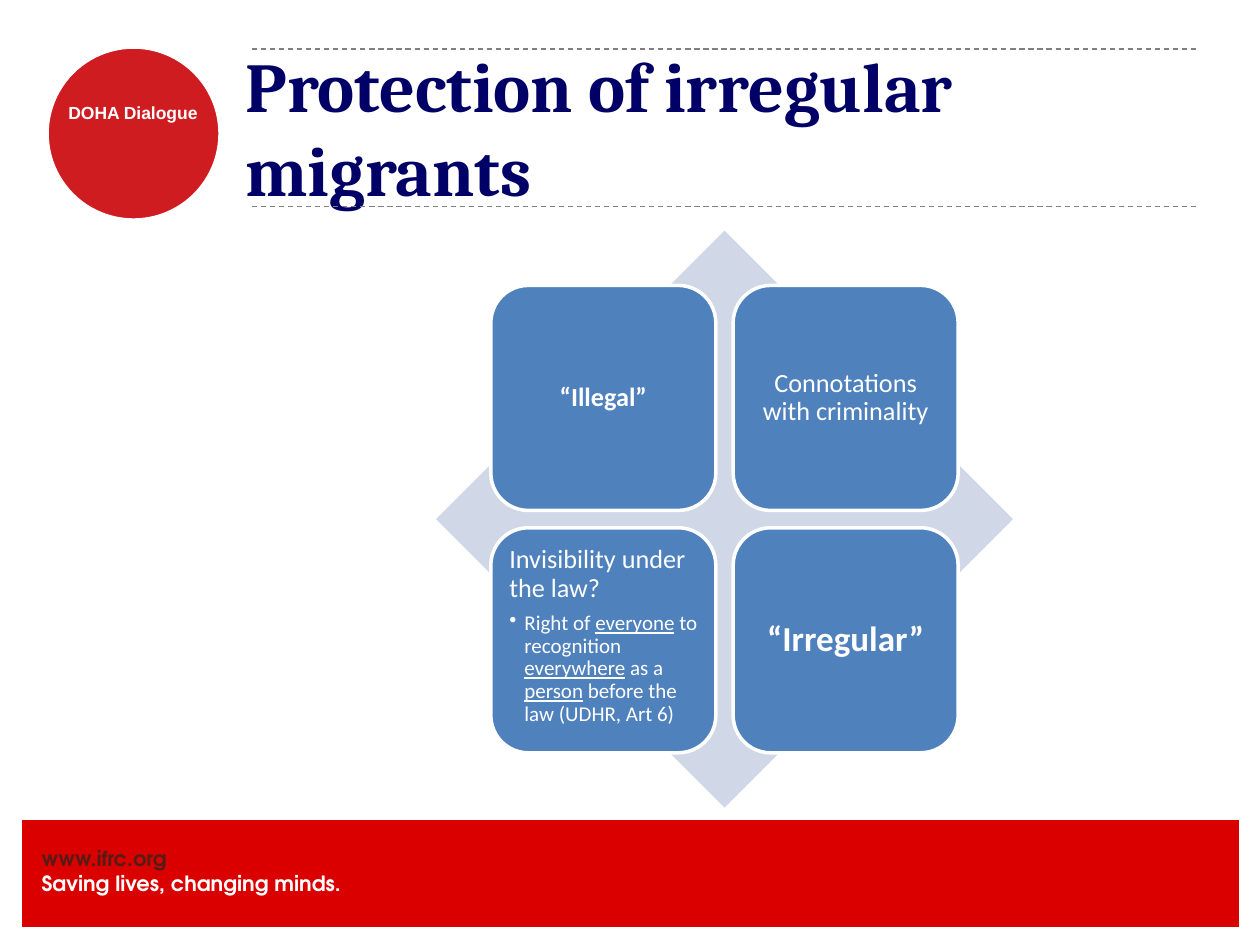
import pptx
import pptx.util
from lxml import etree
from pptx.dml.color import RGBColor
from pptx.enum.dml import MSO_LINE
from pptx.enum.shapes import MSO_CONNECTOR, MSO_SHAPE
from pptx.enum.text import MSO_ANCHOR, MSO_AUTO_SIZE, PP_ALIGN
from pptx.oxml.ns import qn

Inches, Pt = pptx.util.Inches, pptx.util.Pt

THEME = {
    "white": "FFFFFF", "navy": "000066", "rule": "808080",
    "band": "DB0000", "badge": "CF1C21", "address": "551C15",
    "diamond": "D0D8E8", "card": "4F81BD",
    "title_font": "Cambria", "badge_font": "Arial",
    "band_font": "TeX Gyre Adventor", "card_font": "Calibri",
    "title_size": 40, "large": 20, "medium": 15, "small": 12, "tiny": 10,
}

TITLE = "Protection of irregular migrants"
BADGE = "DOHA Dialogue"
FOOTER = [("www.ifrc.org", "address"), ("Saving lives, changing minds.", "white")]
# Cards run row by row; each run is (text, bold, underlined)
CARDS = [
    {"head": "“Illegal”", "size": "medium", "bold": True},
    {"head": "Connotations with criminality", "size": "medium", "bold": False},
    {"head": "Invisibility under the law?", "size": "medium", "bold": False,
     "bullet": [("Right of ", False), ("everyone", True), (" to recognition ", False),
                ("everywhere", True), (" as a ", False), ("person", True),
                (" before the law (UDHR, Art 6)", False)]},
    {"head": "“Irregular”", "size": "large", "bold": True},
]

WIDTH, HEIGHT = 10, 7.5
DIAMOND_LEFT, DIAMOND_TOP, DIAMOND_SIDE = 3.46, 1.83, 4.58
CARD_SIDE = 0.39 * DIAMOND_SIDE
CARD_MARGIN = 0.095 * DIAMOND_SIDE
CARD_STEP = DIAMOND_SIDE - 2 * CARD_MARGIN - CARD_SIDE


def color(name):
    return RGBColor.from_string(THEME[name])


def add_run(paragraph, text, font, size, ink="white", bold=False, underline=False):
    run = paragraph.add_run()
    run.text = text
    run.font.name, run.font.size = THEME[font], Pt(THEME[size])
    run.font.color.rgb = color(ink)
    run.font.bold, run.font.underline = bold, underline


def set_frame(frame, anchor, left=0, top=0, right=0, bottom=0):
    frame.word_wrap = True
    frame.auto_size = MSO_AUTO_SIZE.NONE
    frame.vertical_anchor = anchor
    frame.margin_left, frame.margin_top = Inches(left), Inches(top)
    frame.margin_right, frame.margin_bottom = Inches(right), Inches(bottom)


def add_block(slide, kind, box, fill, line_width=None):
    block = slide.shapes.add_shape(kind, *map(Inches, box))
    block.shadow.inherit = False
    block.fill.solid()
    block.fill.fore_color.rgb = color(fill)
    if line_width is None:
        block.line.fill.background()
    else:
        block.line.color.rgb = color("white")
        block.line.width = Pt(line_width)
    return block


def add_footer(slide):
    band = add_block(slide, MSO_SHAPE.RECTANGLE, (0.17, 6.5, 9.67, 0.86), "band", 0.75)
    frame = band.text_frame
    set_frame(frame, MSO_ANCHOR.MIDDLE, left=0.16, bottom=0.04)
    for i, (text, ink) in enumerate(FOOTER):
        paragraph = frame.add_paragraph() if i else frame.paragraphs[0]
        paragraph.alignment = PP_ALIGN.LEFT
        add_run(paragraph, text, "band_font", "small", ink, bold=True)


def add_badge(slide):
    add_block(slide, MSO_SHAPE.OVAL, (0.37, 0.37, 1.38, 1.38), "badge", 2.5)
    label = slide.shapes.add_textbox(*map(Inches, (0.43, 0.81, 1.25, 0.17)))
    set_frame(label.text_frame, MSO_ANCHOR.TOP)
    paragraph = label.text_frame.paragraphs[0]
    paragraph.alignment = PP_ALIGN.CENTER
    add_run(paragraph, BADGE, "badge_font", "tiny", bold=True)


def add_title(slide):
    for y in (0.39, 1.64):
        rule = slide.shapes.add_connector(
            MSO_CONNECTOR.STRAIGHT, Inches(0.2 * WIDTH), Inches(y), Inches(0.95 * WIDTH), Inches(y))
        rule.line.color.rgb = color("rule")
        rule.line.width = Pt(0.75)
        rule.line.dash_style = MSO_LINE.DASH
        etree.SubElement(rule._element.spPr, qn("a:effectLst"))
    title = slide.shapes.title
    title.left, title.top, title.width, title.height = map(Inches, (1.85, 0.38, 7.95, 1.25))
    set_frame(title.text_frame, MSO_ANCHOR.MIDDLE, 0.1, 0.05, 0.1, 0.05)
    paragraph = title.text_frame.paragraphs[0]
    paragraph.alignment = PP_ALIGN.LEFT
    add_run(paragraph, TITLE, "title_font", "title_size", "navy", bold=True)


def add_bullet(frame, runs):
    paragraph = frame.add_paragraph()
    paragraph.level = 1
    paragraph.alignment = PP_ALIGN.LEFT
    paragraph.line_spacing = 0.9
    properties = paragraph._p.get_or_add_pPr()
    properties.set("marL", str(Inches(0.12)))
    properties.set("indent", str(-Inches(0.12)))
    etree.SubElement(properties, qn("a:buChar")).set("char", "•")
    for text, underline in runs:
        add_run(paragraph, text, "card_font", "small", underline=underline)


def add_cards(slide):
    add_block(slide, MSO_SHAPE.DIAMOND,
              (DIAMOND_LEFT, DIAMOND_TOP, DIAMOND_SIDE, DIAMOND_SIDE), "diamond")
    for i, content in enumerate(CARDS):
        row, column = divmod(i, 2)
        left = DIAMOND_LEFT + CARD_MARGIN + column * CARD_STEP
        top = DIAMOND_TOP + CARD_MARGIN + row * CARD_STEP
        card = add_block(slide, MSO_SHAPE.ROUNDED_RECTANGLE,
                         (left, top, CARD_SIDE, CARD_SIDE), "card", 2)
        has_bullet = "bullet" in content
        inset = 0.004 * THEME[content["size"]]
        frame = card.text_frame
        set_frame(frame, MSO_ANCHOR.TOP if has_bullet else MSO_ANCHOR.MIDDLE, *[inset] * 4)
        head = frame.paragraphs[0]
        head.alignment = PP_ALIGN.LEFT if has_bullet else PP_ALIGN.CENTER
        head.line_spacing = 0.9
        head.space_after = Pt(0.35 * THEME[content["size"]])
        add_run(head, content["head"], "card_font", content["size"], bold=content["bold"])
        if has_bullet:
            add_bullet(frame, content["bullet"])


def main():
    deck = pptx.Presentation()
    deck.slide_width, deck.slide_height = Inches(WIDTH), Inches(HEIGHT)
    slide = deck.slides.add_slide(deck.slide_layouts.get_by_name("Title Only"))
    add_footer(slide)
    add_badge(slide)
    add_title(slide)
    add_cards(slide)
    deck.save("out.pptx")


if __name__ == "__main__":
    main()
